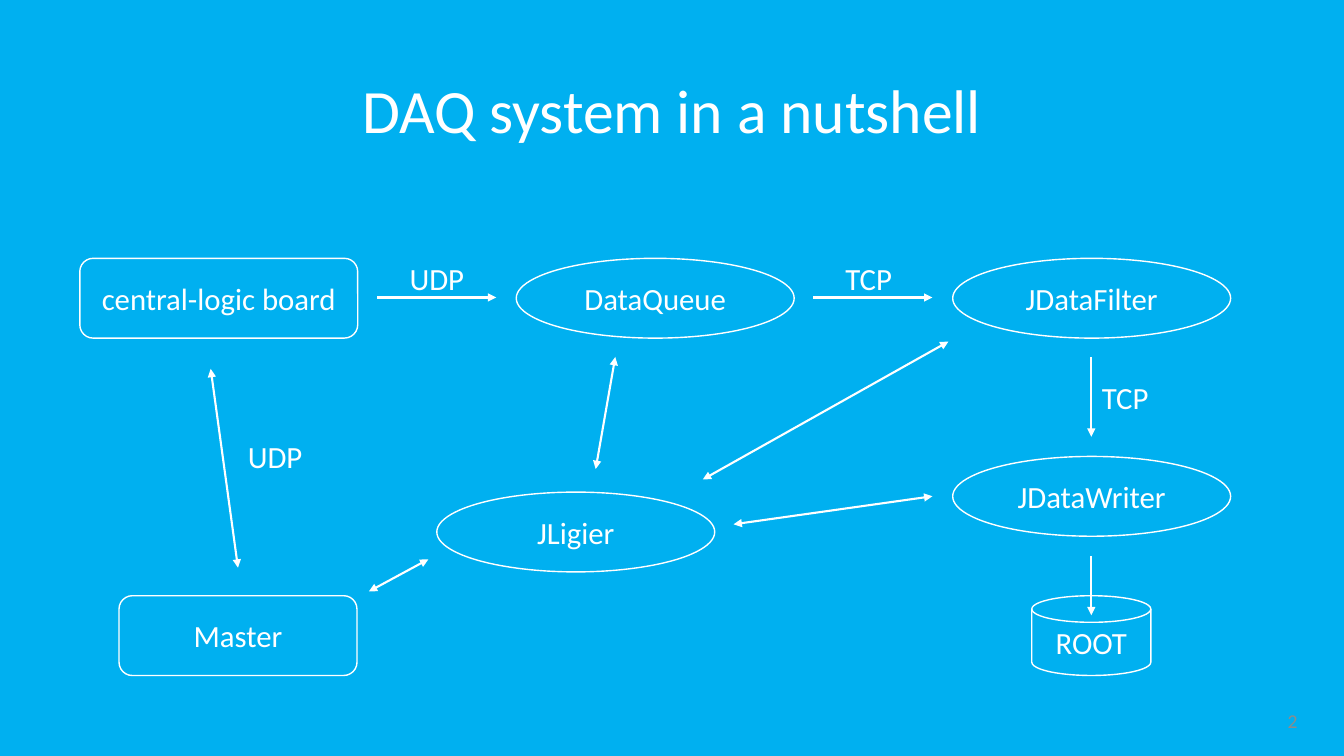
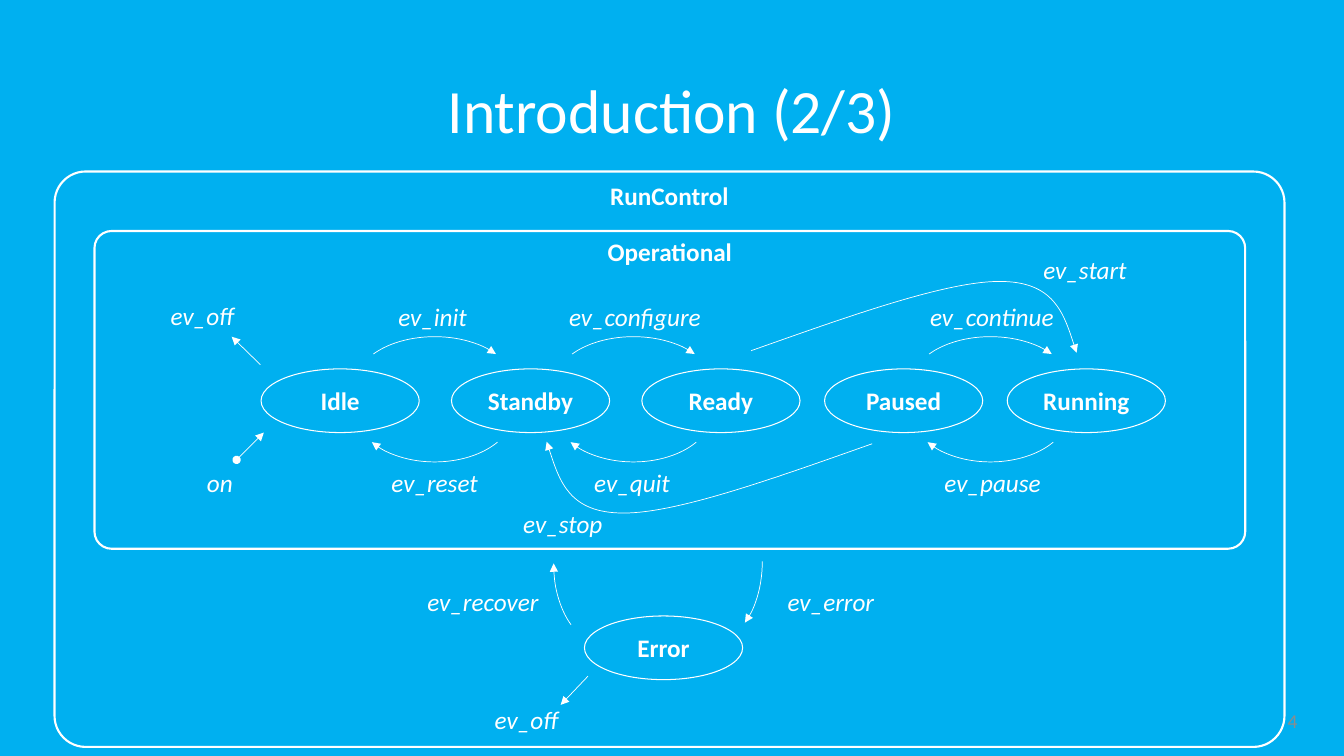
from lxml import etree
from pptx import Presentation
from pptx.dml.color import RGBColor
from pptx.enum.shapes import MSO_CONNECTOR, MSO_SHAPE
from pptx.enum.text import MSO_ANCHOR, PP_ALIGN
from pptx.oxml.ns import qn
from pptx.util import Pt

ROUND, OVAL = MSO_SHAPE.ROUNDED_RECTANGLE, MSO_SHAPE.OVAL
DISK, ARC = MSO_SHAPE.FLOWCHART_MAGNETIC_DISK, MSO_SHAPE.ARC
STRAIGHT = MSO_CONNECTOR.STRAIGHT
TOP, MIDDLE = MSO_ANCHOR.TOP, MSO_ANCHOR.MIDDLE
LEFT, CENTER, RIGHT = PP_ALIGN.LEFT, PP_ALIGN.CENTER, PP_ALIGN.RIGHT

FONT = "Calibri"
BLUE, WHITE, GREY = "00B0F0", "FFFFFF", "8C8C8C"
TITLE_BOX = (66, 29, 828, 104.5)
NUMBER_BOX = (718, 500.5, 216, 29)

NODE_W, NODE_H = 198.5, 57
COLUMNS = [57 + 311.75 * i for i in range(3)]
ROW, ROW_WRITER, ROW_LIGIER, ROW_BOTTOM = 184.5, 326, 351.5, 425.5
NODES = [
    ("central-logic board", ROUND, COLUMNS[0], ROW, NODE_W),
    ("DataQueue", OVAL, COLUMNS[1], ROW, NODE_W),
    ("JDataFilter", OVAL, COLUMNS[2], ROW, NODE_W),
    ("JDataWriter", OVAL, COLUMNS[2], ROW_WRITER, NODE_W),
    ("JLigier", OVAL, 312, ROW_LIGIER, NODE_W),
    ("Master", ROUND, 85, ROW_BOTTOM, 170),
    ("ROOT", DISK, 737, ROW_BOTTOM, 85),
]
ONE_WAY = [
    (269.5, 212.5, 354.5, 212.5),
    (581, 212.5, 666, 212.5),
    (779.5, 255, 779.5, 312),
    (779.5, 397, 779.5, 439.5),
]
TWO_WAY = [
    (425.5, 335, 439.5, 255),
    (502, 342.5, 677.5, 244),
    (524, 374.5, 666, 354.5),
    (263.5, 422.5, 306, 399.5),
    (170, 405.5, 150.5, 263.5),
]
PROTOCOLS = [
    ("UDP", 269.5, 184.5, CENTER),
    ("TCP", 578, 184.5, CENTER),
    ("TCP", 780, 269.5, LEFT),
    ("UDP", 170, 312, LEFT),
]

REGIONS = [
    ("RunControl", (39, 122.5, 878.5, 411)),
    ("Operational", (67.5, 165, 822, 227)),
]
STATE_W, STATE_H = 113, 45.5
STATES = [
    ("Idle", 186.5, 263.5),
    ("Standby", 322.5, 263.5),
    ("Ready", 458.5, 263.5),
    ("Paused", 589, 263.5),
    ("Running", 719.5, 263.5),
    ("Error", 417.5, 440),
]
ARC_COLUMNS = [254, 396, 651]
ERROR_ARCS = [
    ((477, 344.5, 67.5, 113), 0, 64),
    ((395.5, 346, 67.5, 113), 116, 180),
]
START_CURVE = [(536.5, 250.5), (606, 226), (675.5, 201), (714, 201),
               (753, 201), (761, 227), (769, 252)]
STOP_CURVE = [(1159.5 - x, 567.5 - y) for x, y in START_CURVE]
EVENT_W = 120
EVENTS = [
    ("ev_init", 309, 211.5),
    ("ev_configure", 453.5, 211.5),
    ("ev_continue", 708.5, 211.5),
    ("ev_reset", 310.5, 330.5),
    ("ev_quit", 451.5, 330.5),
    ("ev_pause", 709, 330.5),
    ("ev_start", 775, 178),
    ("ev_stop", 402, 359.5),
    ("on", 157, 330.5),
    ("ev_off", 144.5, 211),
    ("ev_recover", 345, 415.5),
    ("ev_error", 593.5, 415.5),
    ("ev_off", 376, 499.5),
]
ENTRY_LINE = (169, 328.5, 188.5, 309)
EXIT_LINES = [(186, 260.5, 165.5, 240.5), (420, 483, 400.5, 503.5)]


def rgb(color):
    return RGBColor.from_string(color)


def pts(values):
    return [Pt(v) for v in values]


def write(tf, text, size, color=WHITE, align=CENTER, anchor=MIDDLE,
          bold=False, italic=False):
    tf.word_wrap = True
    tf.vertical_anchor = anchor
    p = tf.paragraphs[0]
    p.alignment = align
    r = p.add_run()
    r.text = text
    r.font.name = FONT
    r.font.size = Pt(size)
    r.font.bold = bold
    r.font.italic = italic
    r.font.color.rgb = rgb(color)
    return p


def add_label(s, text, box, size, **style):
    sp = s.shapes.add_textbox(*pts(box))
    write(sp.text_frame, text, size, **style)


def stroke(sp, width, head=None, tail=None):
    sp.line.color.rgb = rgb(WHITE)
    sp.line.width = Pt(width)
    ln = sp.line._get_or_add_ln()
    for tag, kind in (("a:headEnd", head), ("a:tailEnd", tail)):
        if kind:
            etree.SubElement(ln, qn(tag), type=kind)


def add_outline(s, kind, box, width, tail=None):
    sp = s.shapes.add_shape(kind, *pts(box))
    sp.shadow.inherit = False
    sp.fill.background()
    stroke(sp, width, tail=tail)
    return sp


def add_line(s, ends, width, head=None):
    line = s.shapes.add_connector(STRAIGHT, *pts(ends))
    stroke(line, width, head, "triangle")
    etree.SubElement(line._element.spPr, qn("a:effectLst"))


def add_arc(s, box, start, end):
    sp = add_outline(s, ARC, box, 0.5, "triangle")
    for i, degrees in enumerate((start, end)):
        sp.adjustments[i] = degrees * 0.6


def add_curve(s, points):
    first, *rest = [pts(point) for point in points]
    builder = s.shapes.build_freeform(*first, scale=1.0)
    builder.add_line_segments(rest, close=False)
    sp = builder.convert_to_shape()
    sp.shadow.inherit = False
    sp.fill.background()
    stroke(sp, 0.5, tail="triangle")
    segments = sp._element.xpath(".//a:lnTo")
    for i in range(0, len(segments), 3):
        bezier = etree.Element(qn("a:cubicBezTo"))
        segments[i].addprevious(bezier)
        for segment in segments[i:i + 3]:
            bezier.append(segment[0])
            segment.getparent().remove(segment)


def new_slide(prs, title, number):
    s = prs.slides.add_slide(prs.slide_layouts[5])
    sp = s.shapes.title
    sp.left, sp.top, sp.width, sp.height = pts(TITLE_BOX)
    write(sp.text_frame, title, 44).line_spacing = 0.9
    add_label(s, number, NUMBER_BOX, 14, color=GREY, align=RIGHT)
    return s


def build_daq(prs):
    s = new_slide(prs, "DAQ system in a nutshell", "2")
    for text, kind, x, y, width in NODES:
        sp = add_outline(s, kind, (x, y, width, NODE_H), 1)
        write(sp.text_frame, text, 22)
    for ends in ONE_WAY:
        add_line(s, ends, 1.5)
    for ends in TWO_WAY:
        add_line(s, ends, 1.5, "triangle")
    for text, x, y, align in PROTOCOLS:
        add_label(s, text, (x, y, 85, 28), 22, align=align)


def build_states(prs):
    s = new_slide(prs, "Introduction (2/3)", "4")
    for text, box in REGIONS:
        sp = add_outline(s, ROUND, box, 1.5)
        sp.adjustments[0] = 0.054
        tf = sp.text_frame
        tf.margin_top = tf.margin_bottom = 0
        write(tf, text, 18, anchor=TOP, bold=True)
    for text, x, y in STATES:
        sp = add_outline(s, OVAL, (x, y, STATE_W, STATE_H), 0.75)
        tf = sp.text_frame
        tf.margin_left = tf.margin_right = 0
        write(tf, text, 18, bold=True)
    for x in ARC_COLUMNS:
        add_arc(s, (x, 240.5, 113, 67.5), 206, 334)
        add_arc(s, (x, 258, 113, 72), 26, 154)
    for box, start, end in ERROR_ARCS:
        add_arc(s, box, start, end)
    for points in (START_CURVE, STOP_CURVE):
        add_curve(s, points)
    add_line(s, ENTRY_LINE, 0.5, "oval")
    for ends in EXIT_LINES:
        add_line(s, ends, 0.5)
    for text, center, y in EVENTS:
        box = (center - EVENT_W / 2, y, EVENT_W, 29)
        add_label(s, text, box, 18, anchor=TOP, italic=True)


def main():
    prs = Presentation()
    prs.slide_width, prs.slide_height = Pt(960), Pt(540)
    fill = prs.slide_master.background.fill
    fill.solid()
    fill.fore_color.rgb = rgb(BLUE)
    build_daq(prs)
    build_states(prs)
    prs.save("out.pptx")


if __name__ == "__main__":
    main()
